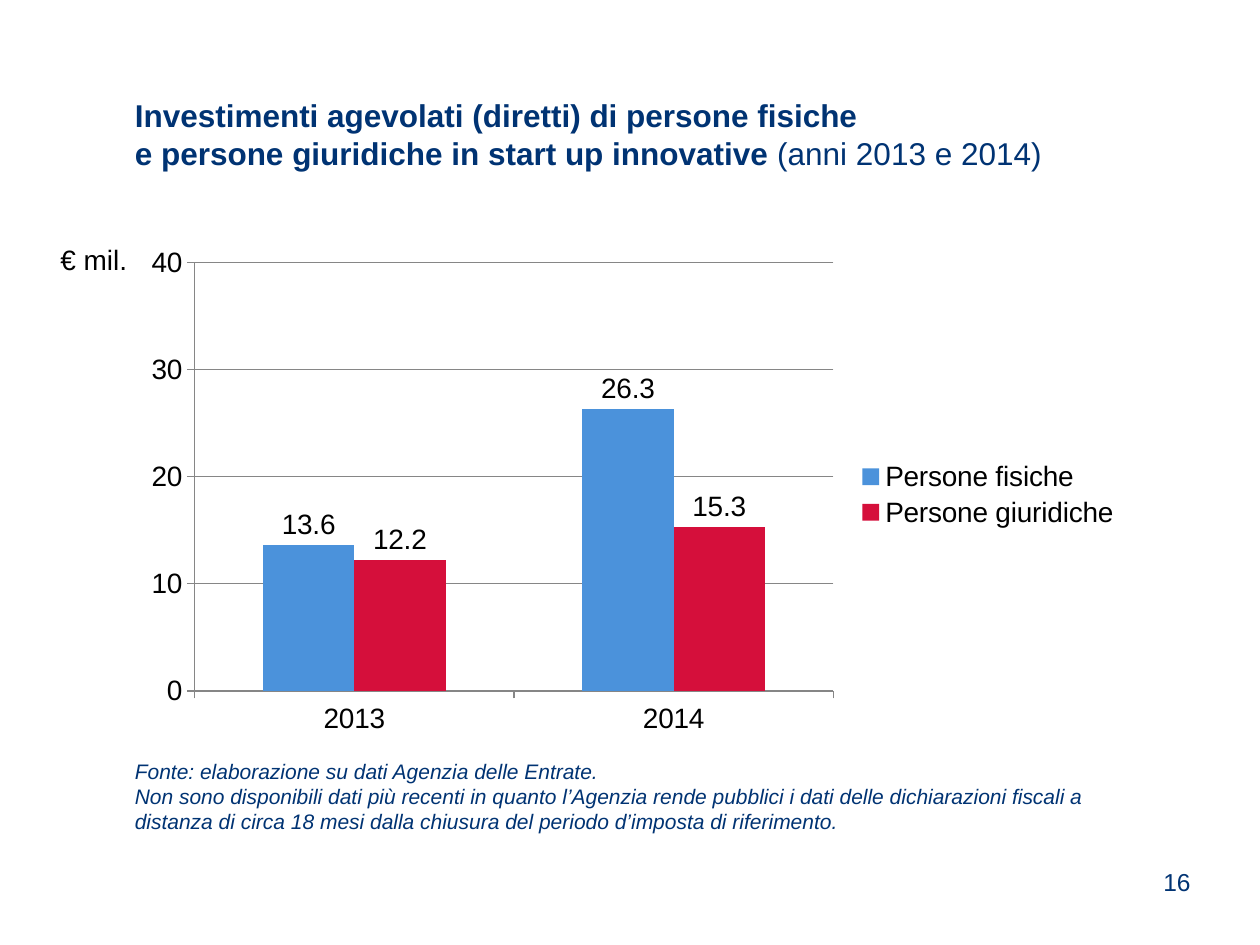
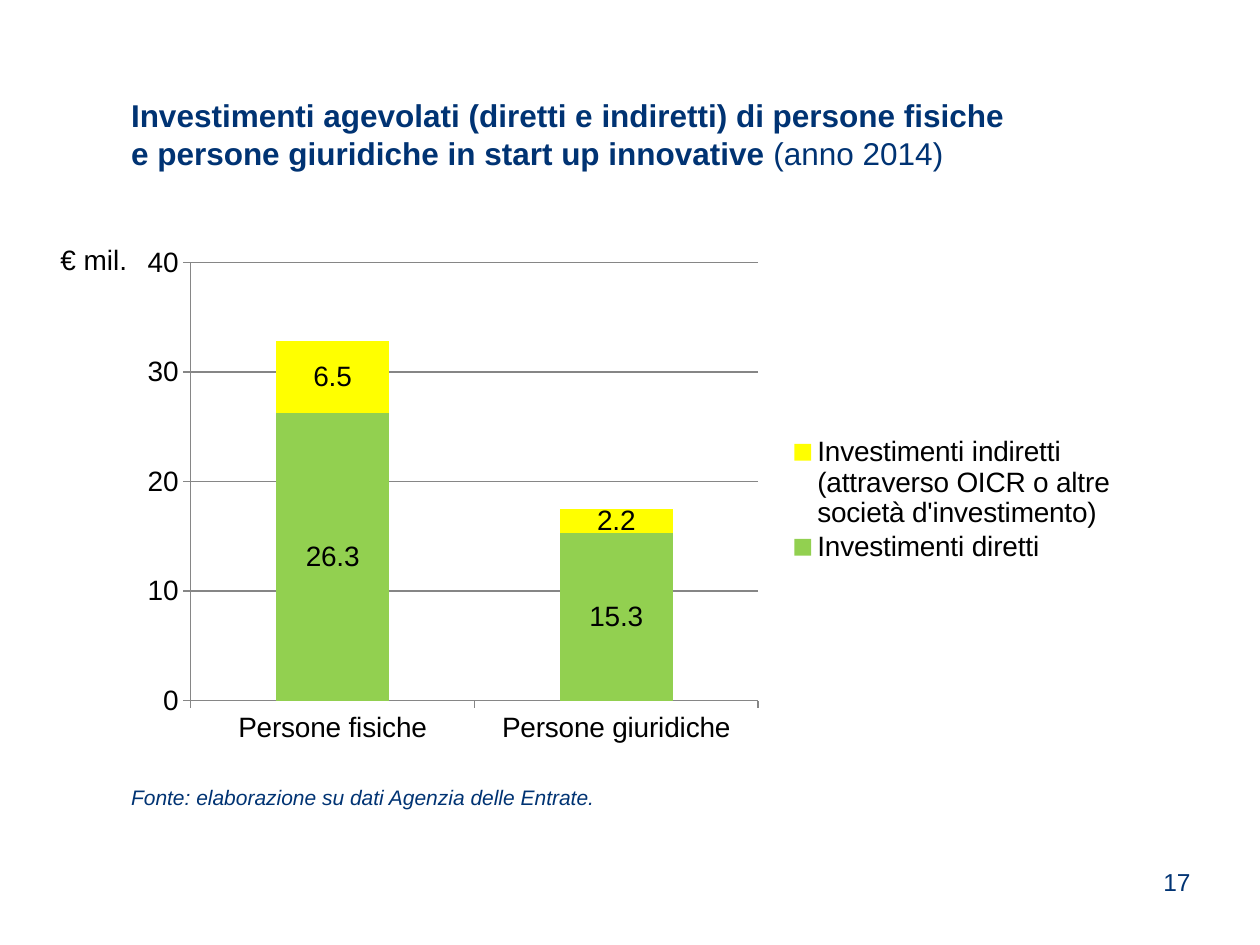
from pptx import Presentation, util as u
from pptx.chart.data import CategoryChartData
from pptx.dml.color import RGBColor
from pptx.enum import chart as ch, text as t
from pptx.oxml import parse_xml
from pptx.oxml.ns import nsdecls, qn

# Content
SOURCE = "Fonte: elaborazione su dati Agenzia delle Entrate."
CAVEAT = ("Non sono disponibili dati più recenti in quanto l’Agenzia rende pubblici i dati "
          "delle dichiarazioni fiscali a distanza di circa 18 mesi dalla chiusura del "
          "periodo d’imposta di riferimento.")
SUBJECT = "e persone giuridiche in start up innovative "

SLIDES = [
    dict(number=16, left=1.07,
         title="Investimenti agevolati (diretti) di persone fisiche",
         period="(anni 2013 e 2014)",
         notes=[SOURCE, CAVEAT], notes_top=6.02,
         kind="clustered", chart_size=(7.92, 4.05),
         categories=["2013", "2014"],
         series=[("Persone fisiche", (13.6, 26.3), "blue"),
                 ("Persone giuridiche", (12.2, 15.3), "red")],
         plot=(0.06, 0.05, 0.64, 0.84), legend=(0.72, 0.43, 0.27, 0.15)),
    dict(number=17, left=1.04,
         title="Investimenti agevolati (diretti e indiretti) di persone fisiche",
         period="(anno 2014)",
         notes=[SOURCE], notes_top=6.23,
         kind="stacked", chart_size=(7.9, 4.09),
         categories=["Persone fisiche", "Persone giuridiche"],
         series=[("Investimenti diretti", (26.3, 15.3), "green"),
                 ("Investimenti indiretti (attraverso OICR o altre società d'investimento)",
                  (6.5, 2.2), "yellow")],
         plot=(0.06, 0.05, 0.57, 0.85), legend=(0.66, 0.38, 0.33, 0.26)),
]

# Shared look
FONT = "Arial"
COLORS = dict(navy="003373", black="000000", grid="868686", blue="4B92DB",
              red="D50F3B", green="92D050", yellow="FFFF00")
CHART_TOP, TEXT_WIDTH = 1.88, 8.11
# chart type, overlap, label position
KINDS = dict(
    clustered=(ch.XL_CHART_TYPE.COLUMN_CLUSTERED, 0, ch.XL_LABEL_POSITION.OUTSIDE_END),
    stacked=(ch.XL_CHART_TYPE.COLUMN_STACKED, 100, ch.XL_LABEL_POSITION.CENTER))


def rgb(name):
    return RGBColor.from_string(COLORS[name])


def style(font, size, color):
    font.name, font.size = FONT, u.Pt(size)
    font.color.rgb = rgb(color)


def add_text(slide, box, lines, size, color="navy", inset=0.0, italic=None,
             align=t.PP_ALIGN.LEFT):
    """Each line is a list of (text, bold) runs."""
    frame = slide.shapes.add_textbox(*map(u.Inches, box)).text_frame
    frame.word_wrap = True
    frame.margin_left = frame.margin_right = u.Inches(inset)
    frame.margin_top = frame.margin_bottom = u.Inches(inset)
    for i, runs in enumerate(lines):
        paragraph = frame.add_paragraph() if i else frame.paragraphs[0]
        paragraph.alignment = align
        style(paragraph.font, size, color)
        paragraph.font.italic = italic
        for words, bold in runs:
            run = paragraph.add_run()
            run.text = words
            run.font.bold = bold


def place(parent, index, area, inner=False):
    """Pin a chart part to shares of the chart's size."""
    for old in parent.findall(qn("c:layout")):
        parent.remove(old)
    target = '<c:layoutTarget val="inner"/>' if inner else ""
    modes = '<c:xMode val="edge"/><c:yMode val="edge"/>'
    shares = "".join(f'<c:{k} val="{v}"/>' for k, v in zip("xywh", area))
    parent.insert(index, parse_xml(
        f'<c:layout {nsdecls("c")}><c:manualLayout>{target}{modes}{shares}'
        '</c:manualLayout></c:layout>'))


def add_columns(slide, page):
    chart_type, overlap, label_position = KINDS[page["kind"]]
    data = CategoryChartData()
    data.categories = page["categories"]
    for name, values, _ in page["series"]:
        data.add_series(name, values)
    box = (page["left"], CHART_TOP, *page["chart_size"])
    chart = slide.shapes.add_chart(chart_type, *map(u.Inches, box), data).chart
    style(chart.font, 16, "black")
    chart.has_title = False

    # Columns and their values
    columns = chart.plots[0]
    columns.gap_width, columns.overlap = 150, overlap
    columns.vary_by_categories = False
    for series, (_, _, color) in zip(columns.series, page["series"]):
        series.format.fill.solid()
        series.format.fill.fore_color.rgb = rgb(color)
        labels = series.data_labels
        labels.show_value = True
        labels.position = label_position
        style(labels.font, 16, "black")

    # Axes
    amounts = chart.value_axis
    amounts.minimum_scale, amounts.maximum_scale, amounts.major_unit = 0, 40, 10
    amounts.has_major_gridlines = True
    for axis in (chart.category_axis, amounts):
        axis.major_tick_mark = ch.XL_TICK_MARK.OUTSIDE
        axis.minor_tick_mark = ch.XL_TICK_MARK.NONE
        style(axis.tick_labels.font, 16, "black")
    for part in (chart.category_axis, amounts, amounts.major_gridlines):
        part.format.line.color.rgb = rgb("grid")
        part.format.line.width = u.Pt(0.75)

    # Legend and placing
    chart.has_legend = True
    legend = chart.legend
    legend.position = ch.XL_LEGEND_POSITION.RIGHT
    legend.include_in_layout = False
    style(legend.font, 16, "black")
    space = chart.element.chart if hasattr(chart, "element") else chart._chartSpace.chart
    place(space.find(qn("c:plotArea")), 0, page["plot"], inner=True)
    place(space.find(qn("c:legend")), 1, page["legend"])


def build(deck, page):
    slide = deck.slides.add_slide(deck.slide_layouts[6])
    left = page["left"]
    add_text(slide, (left, 0.76, TEXT_WIDTH, 0.61),
             [[(page["title"], True)], [(SUBJECT, True), (page["period"], False)]], 18)
    add_columns(slide, page)
    add_text(slide, (0.43, CHART_TOP, 0.94, 0.37), [[("€ mil.", None)]], 16,
             "black", inset=0.05)
    add_text(slide, (left, page["notes_top"], TEXT_WIDTH, 0.2 * len(page["notes"])),
             [[(note, None)] for note in page["notes"]], 12, italic=True)
    add_text(slide, (7.17, 6.83, 2.33, 0.32), [[(str(page["number"]), None)]], 14,
             inset=0.05, align=t.PP_ALIGN.RIGHT)


def main():
    deck = Presentation()
    deck.slide_width, deck.slide_height = u.Inches(10), u.Inches(7.5)
    for page in SLIDES:
        build(deck, page)
    deck.save("out.pptx")


if __name__ == "__main__":
    main()
